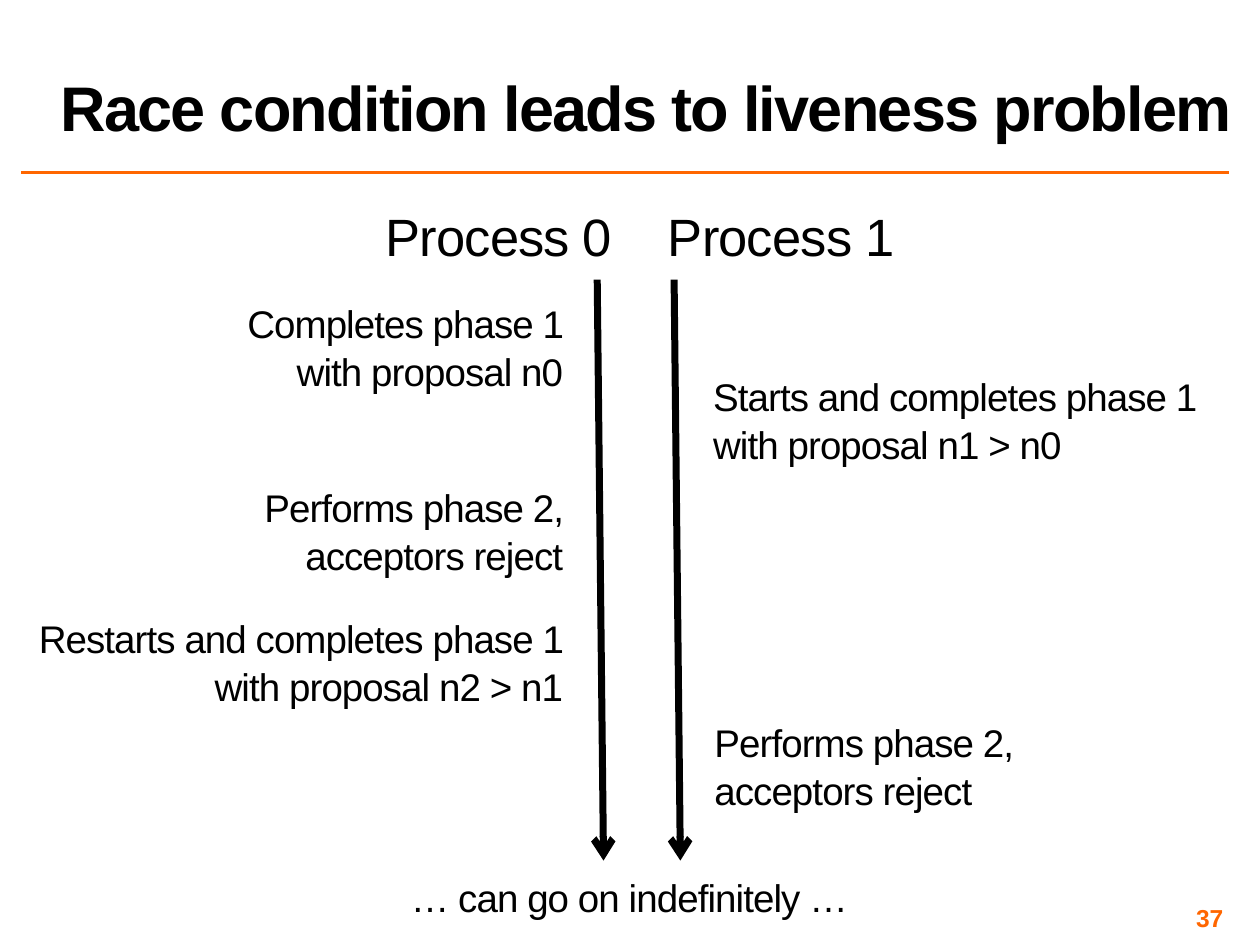
from dataclasses import dataclass

from lxml.etree import SubElement
from pptx import Presentation
from pptx.dml.color import RGBColor
from pptx.enum.shapes import MSO_CONNECTOR
from pptx.enum.text import MSO_ANCHOR, MSO_AUTO_SIZE, PP_ALIGN
from pptx.oxml.ns import qn
from pptx.util import Inches, Pt


@dataclass(frozen=True)
class Theme:
    font: str = "Arial"
    ink: RGBColor = RGBColor(0, 0, 0)
    accent: RGBColor = RGBColor(0xFF, 0x66, 0x00)
    title: int = 36
    heading: int = 30
    body: int = 22
    number: int = 14
    rule: int = 2
    timeline: int = 4


THEME = Theme()
LEFT, CENTER, RIGHT = PP_ALIGN.LEFT, PP_ALIGN.CENTER, PP_ALIGN.RIGHT


def place(shape, left, top, width, height):
    shape.left, shape.top = Inches(left), Inches(top)
    shape.width, shape.height = Inches(width), Inches(height)


def write(shape, text, size, align, color=THEME.ink, bold=False, tracking=0):
    frame = shape.text_frame
    frame.text = text
    frame.word_wrap = True
    frame.auto_size = MSO_AUTO_SIZE.NONE
    paragraph = frame.paragraphs[0]
    paragraph.alignment = align
    run = paragraph.runs[0]
    run.font.name = THEME.font
    run.font.size = Pt(size)
    run.font.bold = bold
    run.font.color.rgb = color
    if tracking:
        run.font._element.set("spc", str(round(tracking * 100)))
    return paragraph


def trim_margins(frame):
    frame.margin_left = frame.margin_right = Inches(0.04)
    frame.margin_top = frame.margin_bottom = Inches(0.04)


def write_step(shape, text, align, size=THEME.body):
    paragraph = write(shape, text, size, align, tracking=-0.5)
    paragraph.space_before, paragraph.space_after = Pt(30), Pt(8)
    paragraph.line_spacing = 1.04
    trim_margins(shape.text_frame)
    return paragraph


def add_step(slide, text, box, align, size=THEME.body):
    label = slide.shapes.add_textbox(*map(Inches, box))
    write_step(label, text, align, size)


def add_line(slide, start, end, color, width, arrow=False):
    line = slide.shapes.add_connector(
        MSO_CONNECTOR.STRAIGHT, *map(Inches, (*start, *end)))
    line.line.color.rgb = color
    line.line.width = Pt(width)
    if arrow:
        SubElement(line.line._get_or_add_ln(), qn("a:tailEnd"), type="arrow")
    SubElement(line._element.spPr, qn("a:effectLst"))


def fill_title(slide):
    title = slide.shapes.title
    place(title, 0.38, 0.02, 9.62, 1.17)
    paragraph = write(title, "Race condition leads to liveness problem",
                      THEME.title, LEFT, bold=True, tracking=-1)
    paragraph.line_spacing = 0.8
    title.text_frame.vertical_anchor = MSO_ANCHOR.BOTTOM


def fill_first_step(slide):
    first_step = slide.placeholders[1]
    place(first_step, 1.67, 2.33, 2.84, 1.32)
    paragraph = write_step(
        first_step, "Completes phase 1 with proposal n0", RIGHT)
    properties = paragraph._p.get_or_add_pPr()
    properties.set("marL", "0")
    properties.set("indent", "0")
    SubElement(properties, qn("a:buNone"))


def add_slide_number(slide):
    number = slide.shapes.add_textbox(*map(Inches, (7.42, 7.17, 2.33, 0.23)))
    write(number, "37", THEME.number, RIGHT, THEME.accent, bold=True)
    trim_margins(number.text_frame)
    number.text_frame.vertical_anchor = MSO_ANCHOR.MIDDLE


def main():
    deck = Presentation()
    deck.slide_width, deck.slide_height = Inches(10), Inches(7.5)
    slide = deck.slides.add_slide(deck.slide_layouts[1])

    add_line(slide, (0.17, 1.37), (9.75, 1.37), THEME.accent, THEME.rule)
    fill_title(slide)
    fill_first_step(slide)
    add_slide_number(slide)

    processes = (("Process 0", 2.54, 4.74), ("Process 1", 4.78, 5.35))
    for process, heading_left, timeline_x in processes:
        add_step(slide, process, (heading_left, 1.56, 2.84, 0.64),
                 CENTER, THEME.heading)
        add_line(slide, (timeline_x, 2.22), (timeline_x + 0.05, 6.83),
                 THEME.ink, THEME.timeline, arrow=True)

    rejection = "Performs phase 2, acceptors reject"
    steps = (
        ("Starts and completes phase 1 with proposal n1 > n0",
         (5.62, 2.91, 3.96, 1.3), LEFT),
        (rejection, (1.54, 3.79, 2.97, 0.93), RIGHT),
        ("Restarts and completes phase 1 with proposal n2 > n1",
         (0.24, 4.83, 4.27, 1.03), RIGHT),
        (rejection, (5.63, 5.65, 3.38, 0.94), LEFT),
        ("… can go on indefinitely …", (2.85, 6.88, 4.29, 0.45), CENTER),
    )
    for text, box, align in steps:
        add_step(slide, text, box, align)

    deck.save("out.pptx")


if __name__ == "__main__":
    main()
